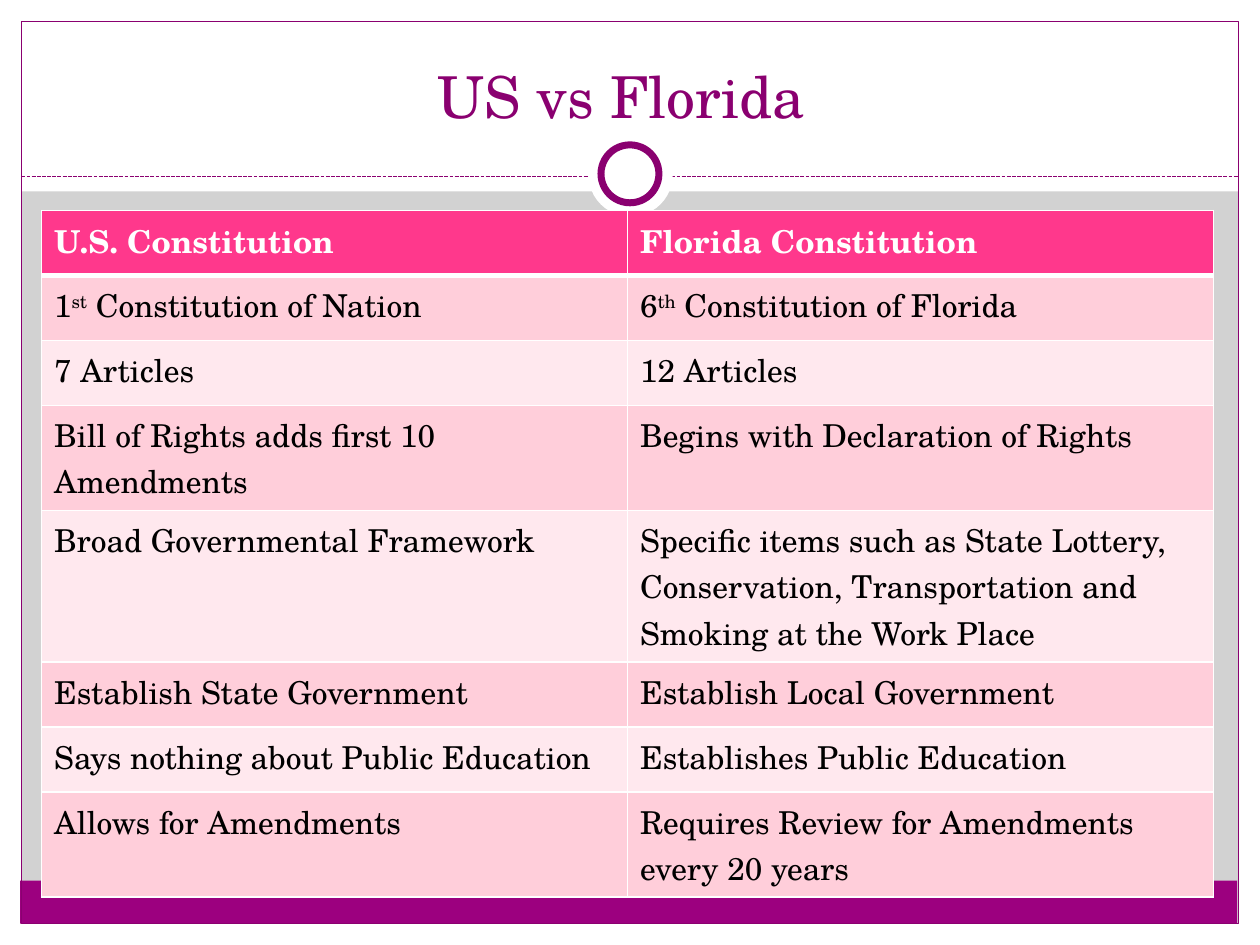
from lxml import etree
from pptx import Presentation
from pptx.dml.color import RGBColor
from pptx.enum.dml import MSO_LINE
from pptx.enum.shapes import MSO_CONNECTOR, MSO_SHAPE
from pptx.enum.text import MSO_ANCHOR, MSO_AUTO_SIZE, PP_ALIGN
from pptx.oxml.ns import qn
from pptx.util import Inches, Pt

RECTANGLE, OVAL = MSO_SHAPE.RECTANGLE, MSO_SHAPE.OVAL
STRAIGHT = MSO_CONNECTOR.STRAIGHT
DASH = MSO_LINE.SQUARE_DOT
CENTER, BOTTOM = PP_ALIGN.CENTER, MSO_ANCHOR.BOTTOM
NO_AUTOFIT = MSO_AUTO_SIZE.NONE

FONT = "TeX Gyre Schola"
COLORS = {
    "background": "D2D2D2", "white": "FFFFFF", "black": "000000",
    "purple": "8A0070", "footer": "9C007F",
    "header": "FF388C", "odd": "FFCEDA", "even": "FFE8EE",
}
TITLE = "US vs Florida "
ROWS = [
    ("U.S. Constitution", "Florida Constitution"),
    (("1", "st", " Constitution of Nation"), ("6", "th", " Constitution of Florida")),
    ("7 Articles", "12 Articles"),
    ("Bill of Rights adds first 10 Amendments", "Begins with Declaration of Rights"),
    ("Broad Governmental Framework",
     "Specific items such as State Lottery, Conservation, Transportation and "
     "Smoking at the Work Place"),
    ("Establish State Government", "Establish Local Government"),
    ("Says nothing about Public Education", "Establishes Public Education"),
    ("Allows for Amendments", "Requires Review for Amendments every 20 years"),
]
DECORATIONS = [
    (RECTANGLE, (0, 7.33, 10, 0.17), "white", None),
    (RECTANGLE, (0, 0, 10, 1.52), "white", None),
    (RECTANGLE, (0, 0, 0.17, 7.5), "white", None),
    (RECTANGLE, (9.83, 0, 0.17, 7.5), "white", None),
    (RECTANGLE, (0.16, 6.99, 9.66, 0.34), "footer", None),
    (RECTANGLE, (0.17, 0.17, 9.66, 7.16), None, 0.75),
]
RINGS = [
    (OVAL, (4.67, 1.05, 0.67, 0.67), "white", None),
    (OVAL, (4.77, 1.15, 0.46, 0.46), "white", 4),
]
DIVIDER = (0.17, 1.4, 9.83, 1.4)
TITLE_AREA = (0.33, 0.25, 9.33, 0.83)
TABLE_AREA = (0.33, 1.67, 9.3, 4.13)


def color(name):
    return RGBColor.from_string(COLORS[name])


def inches(values):
    return [Inches(value) for value in values]


def add_decoration(page, kind, area, fill, line_width):
    shape = page.shapes.add_shape(kind, *inches(area))
    shape.shadow.inherit = False
    if fill:
        shape.fill.solid()
        shape.fill.fore_color.rgb = color(fill)
    else:
        shape.fill.background()
    if line_width:
        shape.line.color.rgb = color("purple")
        shape.line.width = Pt(line_width)
    else:
        shape.line.fill.background()


def add_divider(page):
    line = page.shapes.add_connector(STRAIGHT, *inches(DIVIDER))
    line.line.color.rgb = color("purple")
    line.line.width = Pt(0.75)
    line.line.dash_style = DASH
    etree.SubElement(line.element.spPr, qn("a:effectLst"))


def add_span(para, text, size, color_name, bold=False):
    span = para.add_run()
    span.text = text
    span.font.name = FONT
    span.font.size = Pt(size)
    span.font.bold = bold
    span.font.color.rgb = color(color_name)
    return span


def place_title(page):
    title = page.shapes.title
    title.left, title.top, title.width, title.height = inches(TITLE_AREA)
    frame = title.text_frame
    frame.word_wrap = True
    frame.auto_size = NO_AUTOFIT
    frame.vertical_anchor = BOTTOM
    para = frame.paragraphs[0]
    para.alignment = CENTER
    add_span(para, TITLE, 33, "purple")
    page.shapes.element.append(title.element)


def set_borders(cell, widths):
    properties = cell._tc.get_or_add_tcPr()
    for side, width in widths.items():
        border = etree.SubElement(properties, qn(f"a:ln{side}"), w=str(Pt(width)))
        fill = etree.SubElement(border, qn("a:solidFill"))
        etree.SubElement(fill, qn("a:srgbClr"), val=COLORS["white"])


def fill_cell(cell, content, row_index):
    is_header = row_index == 0
    below_header = row_index == 1
    set_borders(cell, {"L": 1, "R": 1, "T": 3 if below_header else 1,
                       "B": 3 if is_header else 1})
    cell.fill.solid()
    band = "header" if is_header else "odd" if row_index % 2 else "even"
    cell.fill.fore_color.rgb = color(band)
    parts = (content,) if isinstance(content, str) else content
    para = cell.text_frame.paragraphs[0]
    for index, part in enumerate(parts):
        span = add_span(para, part, 18, "white" if is_header else "black", is_header)
        if index == 1:
            span._r.get_or_add_rPr().set("baseline", "30000")


def add_comparison(page):
    table = page.shapes.add_table(len(ROWS), len(ROWS[0]), *inches(TABLE_AREA)).table
    table.first_row = False
    table.horz_banding = False
    for row_index, row in enumerate(ROWS):
        for column_index, content in enumerate(row):
            fill_cell(table.cell(row_index, column_index), content, row_index)


def main():
    deck = Presentation()
    deck.slide_width, deck.slide_height = Inches(10), Inches(7.5)
    page = deck.slides.add_slide(deck.slide_layouts[5])
    page.background.fill.solid()
    page.background.fill.fore_color.rgb = color("background")
    for decoration in DECORATIONS:
        add_decoration(page, *decoration)
    add_divider(page)
    for ring in RINGS:
        add_decoration(page, *ring)
    place_title(page)
    add_comparison(page)
    deck.save("out.pptx")


if __name__ == "__main__":
    main()
